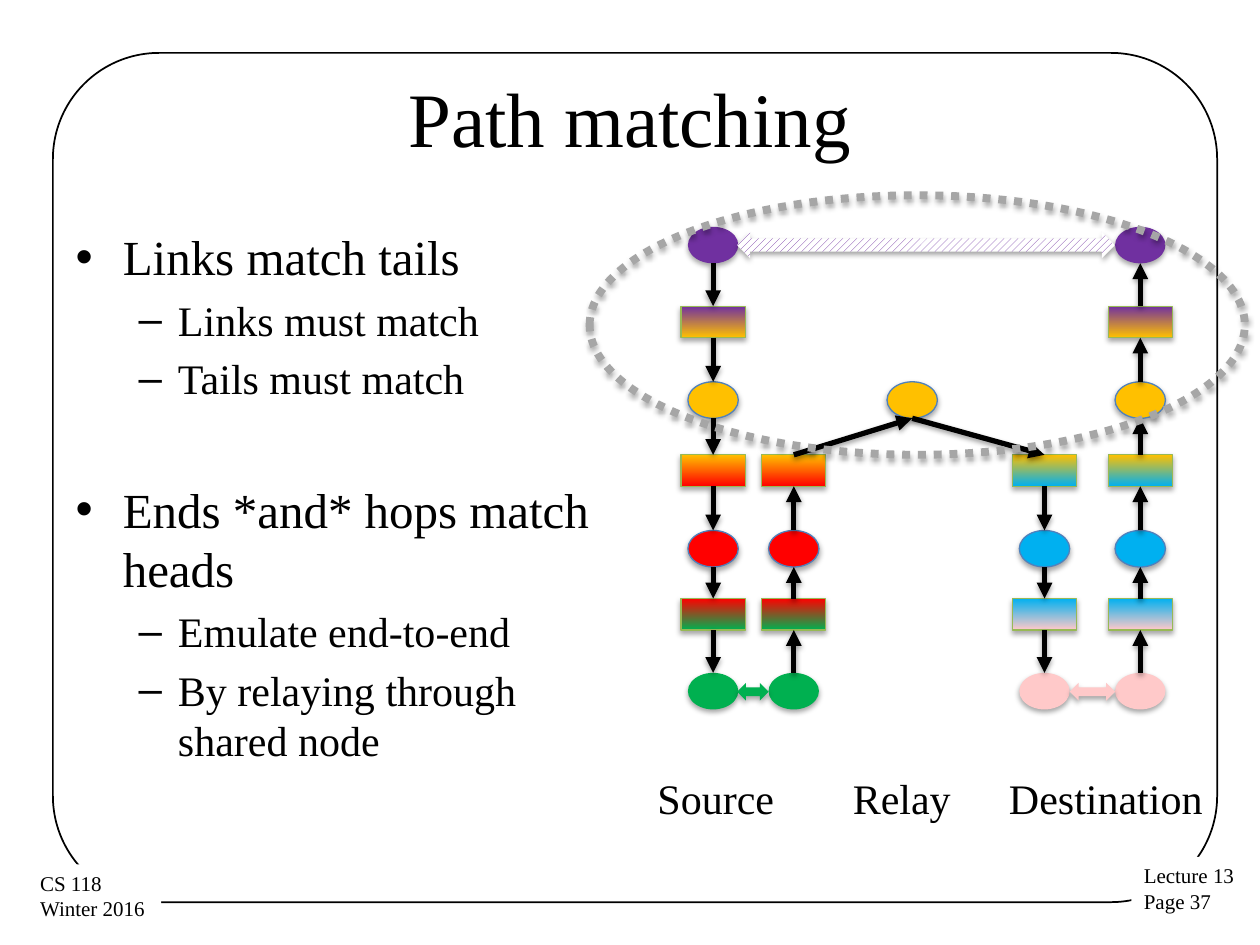
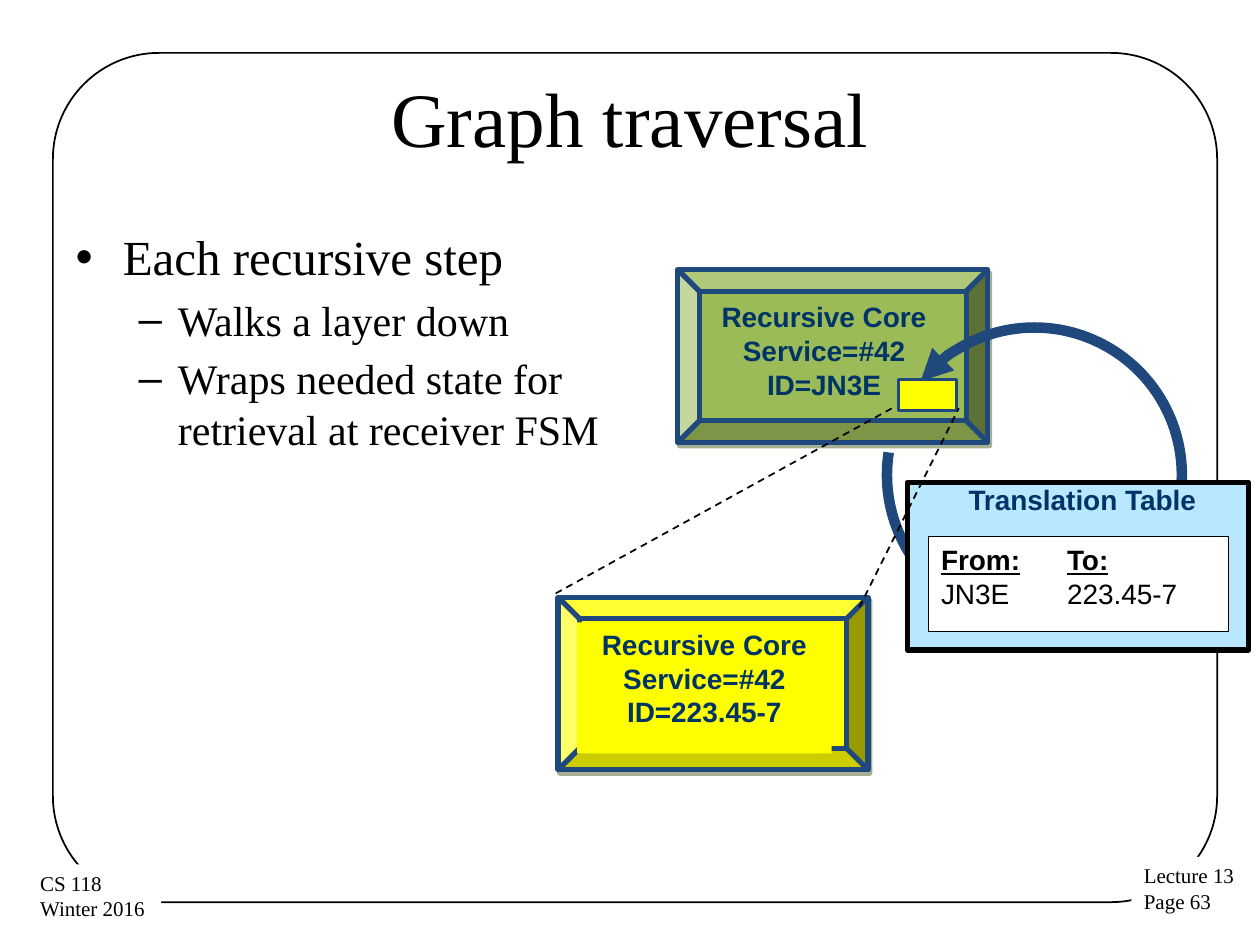
"""Build two lecture slides: path matching and graph traversal."""
from lxml.etree import SubElement
from pptx import Presentation
from pptx.dml.color import RGBColor
from pptx.enum.dml import MSO_LINE as DASH, MSO_PATTERN
from pptx.enum.shapes import MSO_CONNECTOR, MSO_SHAPE as SHAPE
from pptx.enum.text import MSO_ANCHOR, MSO_AUTO_SIZE, PP_ALIGN
from pptx.oxml.ns import qn
from pptx.util import Inches, Pt

BLACK, WHITE, NAVY, STEEL = "000000", "FFFFFF", "003366", "1F497D"
PURPLE, AMBER, RED, GREEN = "7030A0", "FFC000", "FF0000", "00B050"
SKY, PINK, YELLOW, OLIVE = "00B0F0", "FFC9C9", "FFFF00", "9BBB59"
SERIF, SANS = "Times New Roman", "Arial"

SLIDES = [
    ("Path matching", 37, [
        (0, "Links match tails"), (1, "Links must match"), (1, "Tails must match"),
        (0, "Ends *and* hops match heads"), (1, "Emulate end-to-end"),
        (1, "By relaying through shared node")]),
    ("Graph traversal", 63, [
        (0, "Each recursive step"), (1, "Walks a layer down"),
        (1, "Wraps needed state for retrieval at receiver FSM")]),
]
BODY_SIZES = (28, 24)
SECTION_GAP = 43.5

SOURCE_LAYERS = (PURPLE, AMBER, RED, GREEN)
DEST_LAYERS = (PURPLE, AMBER, SKY, PINK)
OUTLINED = (AMBER, RED, SKY)
NODE_TOPS = (1.8, 2.43, 3.03, 3.61, 4.21, 4.75, 5.34)
NODE_W, NODE_H, BOX_W, BOX_H = 0.4, 0.29, 0.51, 0.25
RELAY_X = 7.24
STACKS = [
    (5.66, SOURCE_LAYERS, 0, "down"), (6.3, SOURCE_LAYERS, 3, "up"),
    (8.29, DEST_LAYERS, 3, "down"), (9.05, DEST_LAYERS, 0, "up"),
]
PEER_ARROWS = [(5.85, 0.25, GREEN), (8.49, 0.36, PINK)]
PLACES = [("Source", 5.12, 1.14), ("Relay", 6.67, 0.99), ("Destination", 7.91, 1.76)]

CORE_SIZE, LABEL_SIZE, LABEL_SHIFT = (2.46, 1.37), (2.02, 1.04), (0.15, 0.2)
CORES = [(5.38, 2.14, OLIVE, None, "JN3E"), (4.43, 4.74, YELLOW, YELLOW, "223.45-7")]
ZOOM_LINES = [((4.41, 4.71), (7.08, 3.24)), ((6.82, 4.82), (7.61, 3.24))]
LOOP_CENTRE, LOOP_RADIUS, LOOP_ANGLES = (8.21, 3.77), 1.17, (219.5, 188.8)

SOFT = (BLACK, 35, 3.1, 1.8, 90)
SOFT_LINE = (BLACK, 38, 3.1, 1.6, 90)
HARD = ("4E6128", 50, 0, 2.2, 63)


def rgb(value):
    """Turn a hex string into a colour."""
    return RGBColor.from_string(value)


def set_fill(sp, value):
    """Fill with nothing, one colour, or a vertical pair of colours."""
    if value is None:
        sp.fill.background()
    elif isinstance(value, tuple):
        sp.fill.gradient()
        sp.fill.gradient_angle = 270
        for stop, colour in zip(sp.fill.gradient_stops, value):
            stop.color.rgb = rgb(colour)
    else:
        sp.fill.solid()
        sp.fill.fore_color.rgb = rgb(value)


def set_line(sp, colour, width=1, dash=None):
    """Set or remove the outline."""
    if colour is None:
        sp.line.fill.background()
        return
    sp.line.color.rgb = rgb(colour)
    sp.line.width = Pt(width)
    if dash:
        sp.line.dash_style = dash


def set_shadow(sp, shadow):
    """Replace the theme shadow by the given one, or by none."""
    effects = SubElement(sp._element.spPr, qn("a:effectLst"))
    if shadow:
        colour, alpha, blur, dist, angle = shadow
        outer = SubElement(effects, qn("a:outerShdw"), blurRad=str(Pt(blur)),
                           dist=str(Pt(dist)), dir=str(angle * 60000), rotWithShape="0")
        clr = SubElement(outer, qn("a:srgbClr"), val=colour)
        SubElement(clr, qn("a:alpha"), val=str(alpha * 1000))


def add_arrowhead(sp, end):
    """Put a triangle at headEnd or tailEnd."""
    SubElement(sp.line._get_or_add_ln(), qn(f"a:{end}"), type="triangle")


def shape(s, kind, box, fill=None, line=(None,), shadow=None):
    """Add a preset shape."""
    sp = s.shapes.add_shape(kind, *map(Inches, box))
    set_fill(sp, fill)
    set_line(sp, *line)
    set_shadow(sp, shadow)
    return sp


def connector(s, start, end, line, shadow=None, joins=(None, None), arrow=False):
    """Add a straight line, joined to rectangles where given."""
    cx = s.shapes.add_connector(MSO_CONNECTOR.STRAIGHT, *map(Inches, start + end))
    for connect, join in zip((cx.begin_connect, cx.end_connect), joins):
        if join:
            connect(*join)
    set_line(cx, *line)
    set_shadow(cx, shadow)
    if arrow:
        add_arrowhead(cx, "tailEnd")
    return cx


def style(p, size, name=SERIF, colour=BLACK, **font):
    """Format every run of a paragraph."""
    for r in p.runs:
        for key, value in dict(font, size=Pt(size), name=name).items():
            setattr(r.font, key, value)
        r.font.color.rgb = rgb(colour)


def write(sp, lines, size, align=PP_ALIGN.LEFT, insets=(0.1, 0.05), wrap=True, **font):
    """Write top-anchored paragraphs in one format."""
    tf = sp.text_frame
    tf.word_wrap, tf.vertical_anchor = wrap, MSO_ANCHOR.TOP
    tf.margin_left = tf.margin_right = Inches(insets[0])
    tf.margin_top = tf.margin_bottom = Inches(insets[1])
    tf.text = "\n".join(lines)
    for p in tf.paragraphs:
        p.alignment = align
        style(p, size, **font)
    return tf


def place(sp, box):
    """Move a placeholder."""
    for key, value in zip(("left", "top", "width", "height"), box):
        setattr(sp, key, Inches(value))


def base_slide(prs, title, page, items):
    """Add a slide with the shared frame, corner notes, title and list."""
    s = prs.slides.add_slide(prs.slide_layouts[1])
    frame = shape(s, SHAPE.ROUNDED_RECTANGLE, (0.42, 0.42, 9.24, 6.74), None, (BLACK, 1))
    frame.adjustments[0] = 0.125
    for box, lines in (((8.98, 6.8, 0.93, 0.51), ("Lecture 13", f"Page {page}")),
                       ((0.22, 6.86, 1.06, 0.51), ("CS 118", "Winter 2016"))):
        write(shape(s, SHAPE.RECTANGLE, box, WHITE), lines, 12, wrap=False)
    head, body = s.placeholders
    place(head, (0.5, 0.3, 9, 1.25))
    head.text_frame.text = title
    style(head.text_frame.paragraphs[0], 44)
    place(body, (0.5, 1.75, 4.42, 4.95))
    tf = body.text_frame
    tf.text = "\n".join(text for _, text in items)
    tf.auto_size = MSO_AUTO_SIZE.NONE
    for i, (p, (level, _)) in enumerate(zip(tf.paragraphs, items)):
        p.level = level
        style(p, BODY_SIZES[level])
        if i and level == 0:
            p.space_before = Pt(SECTION_GAP)
    return s


def node(s, x, top, colour):
    """Add a layer ellipse centred on x."""
    line = ("4F81BD", 0.75) if colour in OUTLINED else (None,)
    return shape(s, SHAPE.OVAL, (x - NODE_W / 2, top, NODE_W, NODE_H), colour, line, SOFT)


def stack(s, x, layers, first, direction):
    """Add a column of layers and boxes with its arrows; return the top part."""
    parts = []
    for i in range(first, len(NODE_TOPS)):
        top, layer = NODE_TOPS[i], i // 2
        if i % 2:
            sp = shape(s, SHAPE.RECTANGLE, (x - BOX_W / 2, top, BOX_W, BOX_H),
                       layers[layer:layer + 2], ("98B955", 0.75), SOFT)
        else:
            sp = node(s, x, top, layers[layer])
        parts.append((sp, i % 2, top))
    for (upper, upper_box, y), (lower, lower_box, below) in zip(parts, parts[1:]):
        ends = [((x, y + (BOX_H if upper_box else NODE_H)), (upper, 2) if upper_box else None),
                ((x, below), (lower, 0) if lower_box else None)]
        if direction == "up":
            ends.reverse()
        points, joins = zip(*ends)
        connector(s, *points, (BLACK, 3), SOFT_LINE, joins, True)
    return parts[0][0]


def path_matching(s):
    """Draw the layer stacks, the relay and their labels."""
    tops = [stack(s, *args) for args in STACKS]
    node(s, RELAY_X, NODE_TOPS[2], AMBER)
    relay = (RELAY_X, NODE_TOPS[2] + NODE_H)
    up, down = ((STACKS[i][0], NODE_TOPS[3]) for i in (1, 2))
    connector(s, up, relay, (BLACK, 3), SOFT_LINE, ((tops[1], 0), None), True)
    connector(s, relay, down, (BLACK, 3), SOFT_LINE, (None, (tops[2], 0)), True)
    for x, width, colour in PEER_ARROWS:
        shape(s, SHAPE.LEFT_RIGHT_ARROW, (x, 5.42, width, 0.14), colour, shadow=SOFT)
    shape(s, SHAPE.OVAL, (4.68, 1.55, 5.2, 2.06), None,
          ("A6A6A6", 4.5, DASH.ROUND_DOT), SOFT)
    link = shape(s, SHAPE.LEFT_RIGHT_ARROW, (5.85, 1.84, 3, 0.21), shadow=SOFT)
    link.fill.patterned()
    link.fill.pattern = MSO_PATTERN.WIDE_UPWARD_DIAGONAL
    link.fill.fore_color.rgb, link.fill.back_color.rgb = rgb(PURPLE), rgb(WHITE)
    for text, x, width in PLACES:
        write(s.shapes.add_textbox(*map(Inches, (x, 6.08, width, 0.5))), [text], 24, wrap=False)


def core(s, x, y, colour, label_fill, ident):
    """Add a bevelled recursive core with its label."""
    bevel = shape(s, SHAPE.BEVEL, (x, y, *CORE_SIZE), colour, (STEEL, 3), HARD)
    bevel.adjustments[0] = 0.125
    box = (x + LABEL_SHIFT[0], y + LABEL_SHIFT[1], *LABEL_SIZE)
    write(shape(s, SHAPE.RECTANGLE, box, label_fill),
          ("Recursive Core", "Service=#42", f"ID={ident}"), 16, PP_ALIGN.CENTER,
          (0.07, 0.04), name=SANS, colour=NAVY, bold=True)


def graph_traversal(s):
    """Draw the two cores, the loop and the translation table."""
    core(s, *CORES[0])
    cx, cy = LOOP_CENTRE
    loop = shape(s, SHAPE.ARC, (cx - LOOP_RADIUS, cy - LOOP_RADIUS,
                                2 * LOOP_RADIUS, 2 * LOOP_RADIUS), None, (STEEL, 6))
    for i, angle in enumerate(LOOP_ANGLES):
        loop.adjustments[i] = angle * 0.6
    add_arrowhead(loop, "headEnd")
    table = shape(s, SHAPE.RECTANGLE, (7.2, 3.83, 2.71, 1.33), "B8E7FF", (BLACK, 3))
    tf = write(table, ["Translation Table"], 16, PP_ALIGN.CENTER, (0, 0),
               name=SANS, colour=NAVY, bold=True)
    tf.margin_left = Inches(0.07)
    rows = shape(s, SHAPE.RECTANGLE, (7.37, 4.26, 2.38, 0.75), WHITE, (BLACK, 0.75))
    tf = write(rows, ("From:\tTo:", "JN3E\t223.45-7"), 16, name=SANS)
    style(tf.paragraphs[0], 16, SANS, bold=True, underline=True)
    core(s, *CORES[1])
    shape(s, SHAPE.RECTANGLE, (7.13, 3.01, 0.46, 0.25), YELLOW, (STEEL, 1.5))
    for start, end in ZOOM_LINES:
        connector(s, start, end, (BLACK, 1, DASH.DASH))


def main():
    """Build and save the slides."""
    prs = Presentation()
    prs.slide_width, prs.slide_height = Inches(10), Inches(7.5)
    for content, draw in zip(SLIDES, (path_matching, graph_traversal)):
        draw(base_slide(prs, *content))
    prs.save("out.pptx")


if __name__ == "__main__":
    main()
